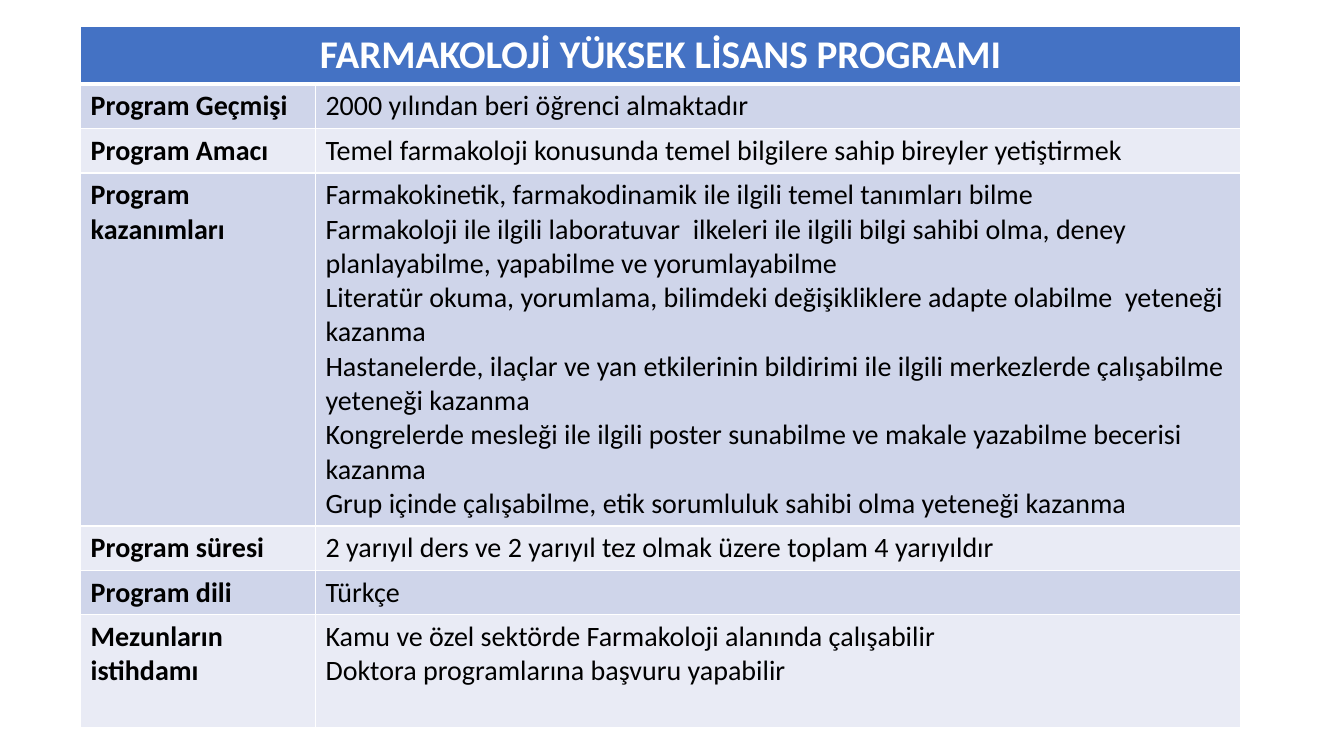
from dataclasses import dataclass

from lxml.etree import SubElement
from pptx import Presentation
from pptx.dml.color import RGBColor
from pptx.enum.text import PP_ALIGN
from pptx.oxml.ns import qn
from pptx.util import Inches, Pt


@dataclass(frozen=True)
class Theme:
    font: str = "Calibri"
    title_size: int = 28
    body_size: int = 20
    header: str = "4472C4"
    bands: tuple = ("CFD5EA", "E9EBF5")
    light: str = "FFFFFF"
    dark: str = "000000"
    rule: float = 1
    header_rule: float = 3


THEME = Theme()
SLIDE_WIDTH, SLIDE_HEIGHT = 13.33, 7.5
PROGRAM_BOX = (0.8, 0.26, 11.5, 6.95)
LABEL_SHARE = 0.2025
LINE_HEIGHT = 0.34
ROW_PADDING = 0.1
TITLE_HEIGHT = 0.57

TITLE = "FARMAKOLOJİ YÜKSEK LİSANS PROGRAMI"
FACTS = [
    ("Program Geçmişi", ["2000 yılından beri öğrenci almaktadır"], 1),
    ("Program Amacı",
     ["Temel farmakoloji konusunda temel bilgilere sahip bireyler yetiştirmek"], 1),
    ("Program kazanımları", [
        "Farmakokinetik, farmakodinamik ile ilgili temel tanımları bilme",
        "Farmakoloji ile ilgili laboratuvar  ilkeleri ile ilgili bilgi sahibi olma, "
        "deney planlayabilme, yapabilme ve yorumlayabilme",
        "Literatür okuma, yorumlama, bilimdeki değişikliklere adapte olabilme  "
        "yeteneği kazanma",
        "Hastanelerde, ilaçlar ve yan etkilerinin bildirimi ile ilgili merkezlerde "
        "çalışabilme yeteneği kazanma",
        "Kongrelerde mesleği ile ilgili poster sunabilme ve makale yazabilme "
        "becerisi kazanma",
        "Grup içinde çalışabilme, etik sorumluluk sahibi olma yeteneği kazanma",
    ], 10),
    ("Program süresi",
     ["2 yarıyıl ders ve 2 yarıyıl tez olmak üzere toplam 4 yarıyıldır"], 1),
    ("Program dili", ["Türkçe"], 1),
    ("Mezunların istihdamı", [
        "Kamu ve özel sektörde Farmakoloji alanında çalışabilir",
        "Doktora programlarına başvuru yapabilir",
    ], 3),
]


def write(frame, lines, size=THEME.body_size, color=THEME.dark, bold=False,
          align=PP_ALIGN.LEFT):
    for index, line in enumerate(lines):
        paragraph = frame.add_paragraph() if index else frame.paragraphs[0]
        paragraph.alignment = align
        run = paragraph.add_run()
        run.text = line
        run.font.name = THEME.font
        run.font.size = Pt(size)
        run.font.bold = bold
        run.font.color.rgb = RGBColor.from_string(color)


def paint(cell, fill, top=THEME.rule, bottom=THEME.rule):
    properties = cell._tc.get_or_add_tcPr()
    sides = {"L": THEME.rule, "R": THEME.rule, "T": top, "B": bottom}
    for side, width in sides.items():
        border = SubElement(properties, qn(f"a:ln{side}"), w=str(Pt(width)))
        solid = SubElement(border, qn("a:solidFill"))
        SubElement(solid, qn("a:srgbClr"), val=THEME.light)
    cell.fill.solid()
    cell.fill.fore_color.rgb = RGBColor.from_string(fill)


def program_table(slide, box):
    left, top, width, height = box
    table = slide.shapes.add_table(
        len(FACTS) + 1, 2, Inches(left), Inches(top), Inches(width), Inches(height)
    ).table
    table.first_row = table.horz_banding = False
    for column, share in zip(table.columns, (LABEL_SHARE, 1 - LABEL_SHARE)):
        column.width = Inches(width * share)

    table.rows[0].height = Inches(TITLE_HEIGHT)
    heading = table.cell(0, 0)
    heading.merge(table.cell(0, 1))
    write(heading.text_frame, [TITLE], size=THEME.title_size, color=THEME.light,
          bold=True, align=PP_ALIGN.CENTER)
    for cell in table.rows[0].cells:
        paint(cell, THEME.header, bottom=THEME.header_rule)

    for number, (label, details, line_count) in enumerate(FACTS, start=1):
        row = table.rows[number]
        row.height = Inches(line_count * LINE_HEIGHT + ROW_PADDING)
        label_cell, detail_cell = row.cells
        write(label_cell.text_frame, [label], bold=True)
        write(detail_cell.text_frame, details)
        for cell in row.cells:
            paint(cell, THEME.bands[(number - 1) % 2],
                  top=THEME.header_rule if number == 1 else THEME.rule)


def main():
    deck = Presentation()
    deck.slide_width, deck.slide_height = Inches(SLIDE_WIDTH), Inches(SLIDE_HEIGHT)
    slide = deck.slides.add_slide(deck.slide_layouts[6])
    program_table(slide, PROGRAM_BOX)
    deck.save("out.pptx")


if __name__ == "__main__":
    main()
